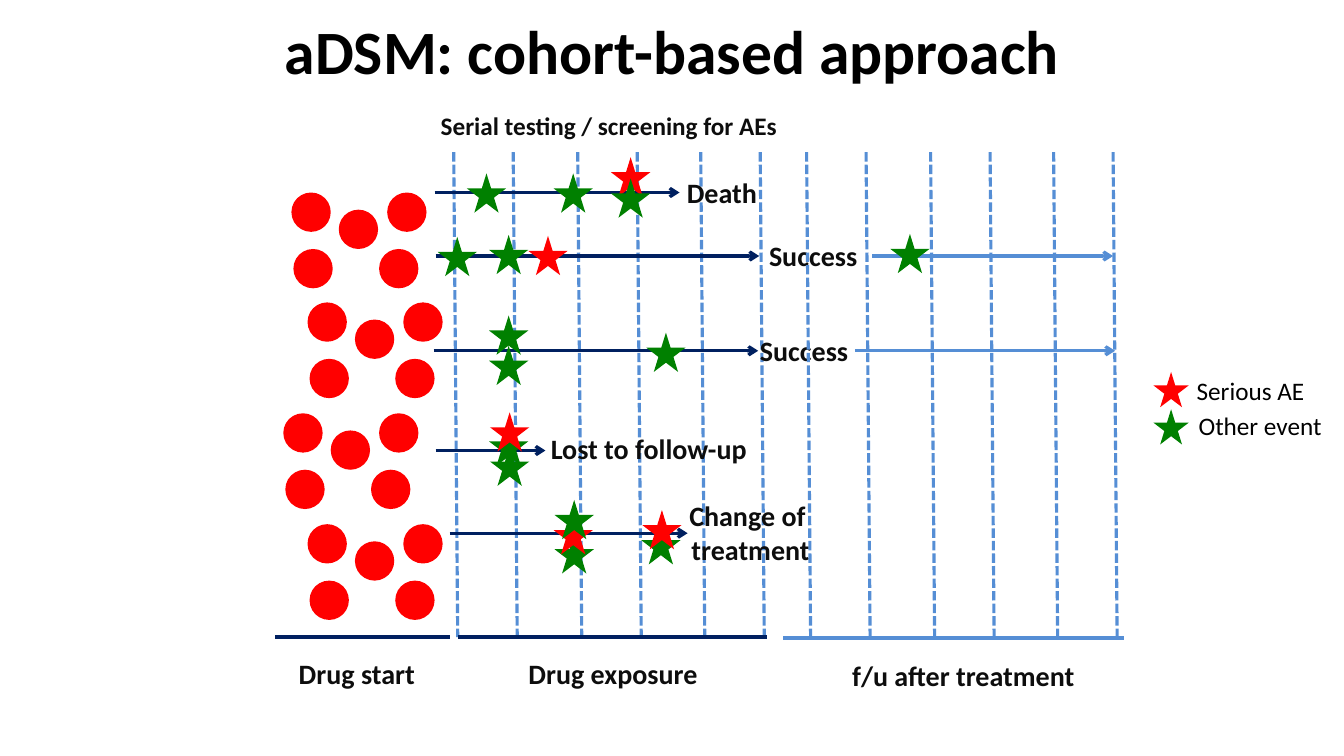
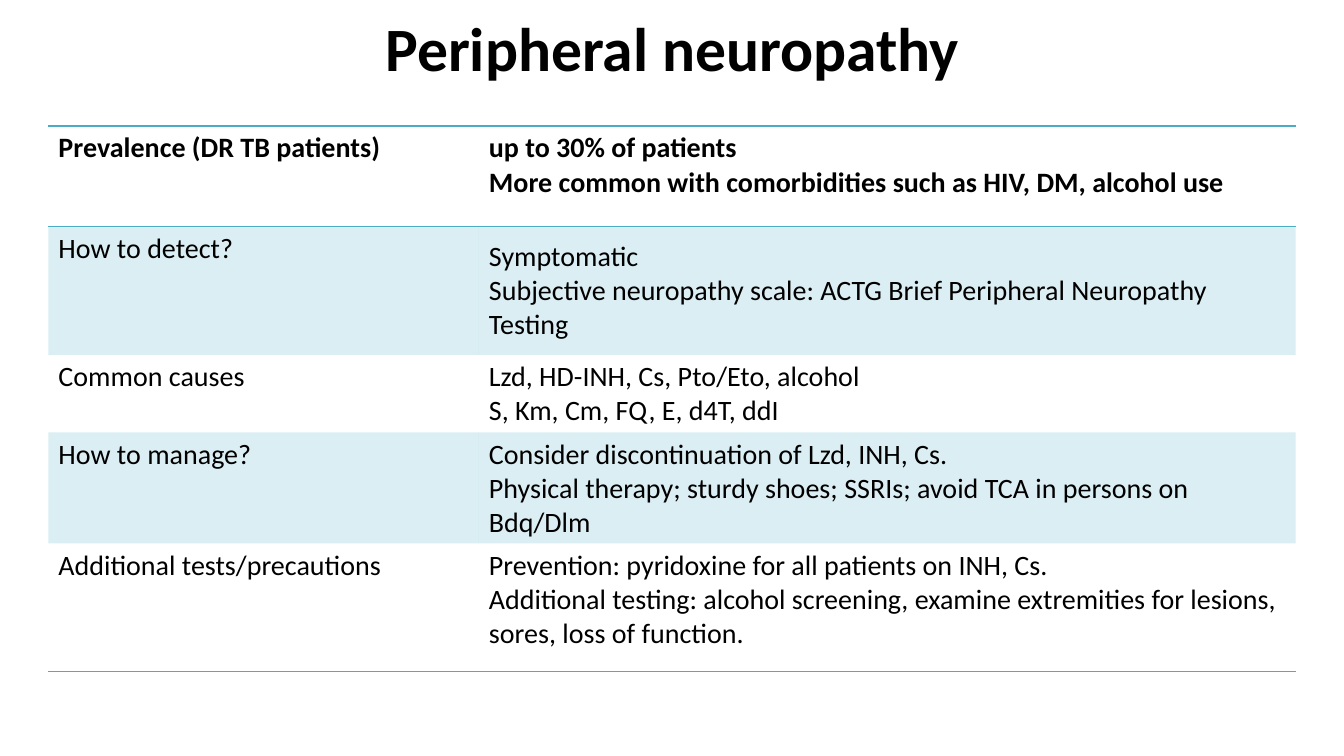
from lxml import etree
from pptx import Presentation
from pptx import util as u
from pptx.dml.color import RGBColor
from pptx.enum import dml, shapes, text
from pptx.oxml.ns import qn

PX = 9144  # EMU per px, 100 px to the inch
FONT = "Calibri"
BLACK = RGBColor(0x00, 0x00, 0x00)
INK = RGBColor(0x0D, 0x0D, 0x0D)
NAVY = RGBColor(0x00, 0x20, 0x60)
BLUE = RGBColor(0x55, 0x8E, 0xD5)
TEAL = RGBColor(0x4B, 0xAC, 0xC6)
RED = RGBColor(0xFF, 0x00, 0x00)
GREEN = RGBColor(0x00, 0x80, 0x00)

DOT = shapes.MSO_SHAPE.OVAL
STAR = shapes.MSO_SHAPE.STAR_5_POINT
LEFT, MID = text.PP_ALIGN.LEFT, text.PP_ALIGN.CENTER
NO_STYLE = "{2D5ABB26-0587-4C30-8999-92F81FD0307C}"

# Cohort slide
GRID = (450, 509, 573, 632, 695, 754)
SHIFT = 350  # from the exposure grid to the follow-up grid
CLUSTERS = ((289, 191), (305, 300), (281, 410), (305, 520))
DOTS = ((0, 0), (47, 17), (95, 0), (2, 56), (87, 56))
COURSES = (  # x1, x2, y
    (431, 674, 191), (432, 753, 254), (430, 752, 348),
    (432, 541, 447), (446, 682, 529),
)
AFTER = ((865, 1104, 254), (848, 1106, 348))
OUTCOMES = (  # x, y, w, h, lines
    (671, 169, 90, 44, ["Death"]),
    (752, 232, 109, 44, ["Success"]),
    (743, 326, 109, 44, ["Success"]),
    (535, 423, 217, 44, ["Lost to follow-up"]),
    (673, 490, 143, 77, ["Change of ", "treatment"]),
)
EVENTS = (  # x, y, colour, from back to front
    (883, 232, GREEN),
    (463, 172, GREEN), (549, 172, GREEN), (606, 156, RED), (606, 177, GREEN),
    (434, 235, GREEN), (485, 233, GREEN), (524, 234, RED),
    (485, 343, GREEN), (485, 313, GREEN), (641, 330, GREEN),
    (486, 443, GREEN), (485, 423, GREEN), (486, 409, RED),
    (550, 530, GREEN), (549, 511, RED), (550, 496, GREEN),
    (636, 521, GREEN), (637, 506, RED),
)
PHASES = (  # bar x1, x2, y, colour, label box, label
    (273, 446, 632, NAVY, (286, 646, 136, 44), "Drug start"),
    (454, 761, 632, NAVY, (513, 646, 190, 44), "Drug exposure"),
    (777, 1115, 633, BLUE, (834, 648, 243, 44), "f/u after treatment"),
)
KEY = (  # star y, colour, label box, label
    (369, RED, (1177, 367, 128, 40), "Serious AE"),
    (406, GREEN, (1179, 402, 144, 40), "Other event"),
)

# Neuropathy slide
COLS = (427, 810)
ROWS = (  # height, question, answers
    (100, "Prevalence (DR TB patients)",
     ["up to 30% of patients",
      "More common with comorbidities such as HIV, DM, alcohol use"]),
    (127, "How to detect?",
     ["Symptomatic",
      "Subjective neuropathy scale: ACTG Brief Peripheral Neuropathy Testing"]),
    (77, "Common causes",
     ["Lzd, HD-INH, Cs, Pto/Eto, alcohol", "S, Km, Cm, FQ, E, d4T, ddI"]),
    (110, "How to manage?",
     ["Consider discontinuation of Lzd, INH, Cs.",
      "Physical therapy; sturdy shoes; SSRIs; avoid TCA in persons on Bdq/Dlm"]),
    (127, "Additional tests/precautions",
     ["Prevention: pyridoxine for all patients on INH, Cs.",
      "Additional testing: alcohol screening, examine extremities for lesions, "
      "sores, loss of function."]),
)


def px(*vals):
    return [u.Emu(v * PX) for v in vals]


def write(frame, lines, size, color=INK, bold=True, align=MID):
    for i, line in enumerate(lines):
        par = frame.add_paragraph() if i else frame.paragraphs[0]
        par.alignment = align
        run = par.add_run()
        run.text = line
        font = run.font
        font.name, font.size, font.bold = FONT, u.Pt(size), bold
        font.color.rgb = color


def label(slide, box, lines, size=20, **style):
    frame = slide.shapes.add_textbox(*px(*box)).text_frame
    frame.word_wrap = False
    write(frame, lines, size, **style)


def title(slide, y, words):
    frame = slide.shapes.add_textbox(*px(167, y, 1000, 94)).text_frame
    frame.word_wrap = True
    frame.vertical_anchor = text.MSO_ANCHOR.MIDDLE
    write(frame, [words], 44, BLACK)


def mark(slide, kind, x, y, color, size=39):
    shape = slide.shapes.add_shape(kind, *px(x, y, size, size))
    shape.shadow.inherit = False
    shape.fill.solid()
    shape.fill.fore_color.rgb = color
    shape.line.fill.background()


def rule(slide, ends, color, width=2.25, dash=False, arrow=False):
    line = slide.shapes.add_connector(shapes.MSO_CONNECTOR.STRAIGHT, *px(*ends))
    line.line.color.rgb = color
    line.line.width = u.Pt(width)
    if dash:
        line.line.dash_style = dml.MSO_LINE.SQUARE_DOT
    props = line.element.spPr
    if arrow:
        etree.SubElement(props.find(qn("a:ln")), qn("a:tailEnd"), type="arrow")
    etree.SubElement(props, qn("a:effectLst"))


def grid(slide, shift=0):
    for x in GRID:
        rule(slide, (x + shift, 151, x + shift + 4, 632), BLUE, dash=True)


def border(cell, side):
    line = etree.Element(qn("a:" + side), w=str(u.Pt(1)))
    fill = etree.SubElement(line, qn("a:solidFill"))
    etree.SubElement(fill, qn("a:srgbClr"), val=str(TEAL))
    props = cell._tc.get_or_add_tcPr()
    props.insert(len(props.findall(qn("a:lnT"))), line)


def tint(cell):
    cell.fill.solid()
    cell.fill.fore_color.rgb = TEAL
    color = cell._tc.tcPr.find(".//" + qn("a:srgbClr"))
    etree.SubElement(color, qn("a:alpha"), val="20000")


def table(slide):
    heights = [row[0] for row in ROWS]
    box = px(48, 125, sum(COLS), sum(heights))
    frame = slide.shapes.add_table(len(ROWS), len(COLS), *box)
    frame.element.find(".//" + qn("a:tableStyleId")).text = NO_STYLE
    grid_ = frame.table
    grid_.first_row = grid_.horz_banding = False
    for col, width in zip(grid_.columns, px(*COLS)):
        col.width = width
    for i, (height, ask, answers) in enumerate(ROWS):
        grid_.rows[i].height = px(height)[0]
        for j, lines in enumerate(([ask], answers)):
            cell = grid_.cell(i, j)
            write(cell.text_frame, lines, 20, BLACK, bold=i == 0, align=LEFT)
            if i % 2:
                tint(cell)
            else:
                cell.fill.background()
            if i == 0:
                border(cell, "lnT")
            if i in (0, len(ROWS) - 1):
                border(cell, "lnB")
    grid_.cell(1, 1).vertical_anchor = text.MSO_ANCHOR.MIDDLE


def cohort(slide):
    grid(slide)
    label(slide, (426, 105, 356, 40), ["Serial testing / screening for AEs"], 18)
    title(slide, 2, "aDSM: cohort-based approach")
    # Patients
    for x, y in CLUSTERS:
        for dx, dy in DOTS:
            mark(slide, DOT, x + dx, y + dy, RED)
    # Treatment courses and outcomes
    for x1, x2, y in COURSES:
        rule(slide, (x1, y, x2, y), NAVY, arrow=True)
    for *box, lines in OUTCOMES:
        label(slide, box, lines)
    # Follow-up
    grid(slide, SHIFT)
    for x1, x2, y in AFTER:
        rule(slide, (x1, y, x2, y), BLUE, arrow=True)
    # Phases along the bottom
    for x1, x2, y, color, box, words in PHASES:
        rule(slide, (x1, y, x2, y), color, 3)
        label(slide, box, [words])
    # Events and their key
    for x, y, color in EVENTS:
        mark(slide, STAR, x, y, color)
    for y, color, box, words in KEY:
        mark(slide, STAR, 1144, y, color, 35)
        label(slide, box, [words], 18, color=BLACK, bold=False, align=LEFT)


def nerve(slide):
    title(slide, 0, "Peripheral neuropathy")
    table(slide)


def main():
    deck = Presentation()
    deck.slide_width, deck.slide_height = px(1333, 750)
    for build in (cohort, nerve):
        build(deck.slides.add_slide(deck.slide_layouts[6]))
    deck.save("out.pptx")


if __name__ == "__main__":
    main()
